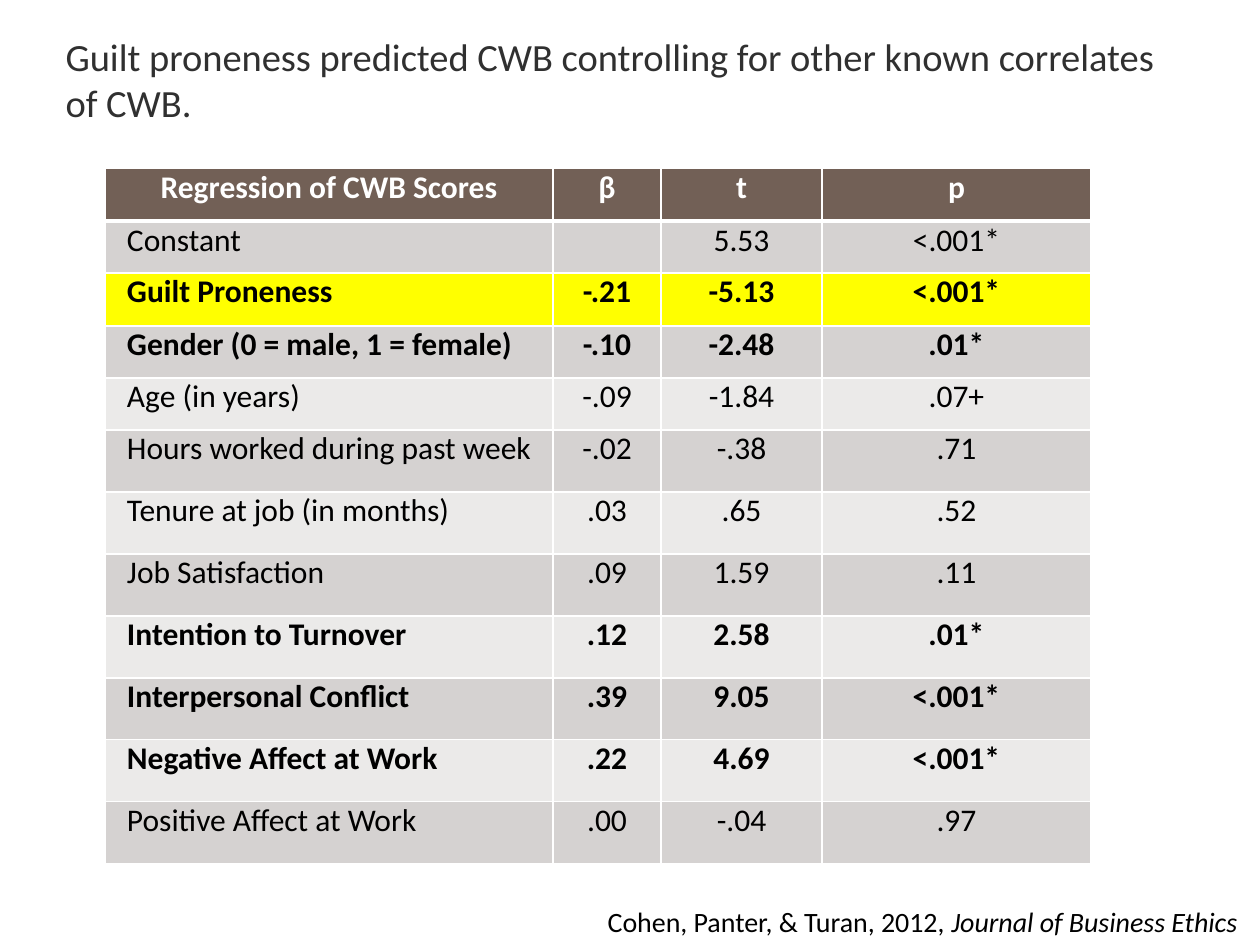
import pptx
import pptx.util
import pptx.dml.color
import pptx.enum.text
import pptx.oxml
import pptx.oxml.ns

TITLE = "Guilt proneness predicted CWB controlling for other known correlates of CWB."
SOURCE = [("Cohen, Panter, & Turan, 2012", False), (", Journal of Business Ethics", True)]
HEADER = ("Regression of CWB Scores", "β", "t", "p")
ROWS = [
    ("Constant", "", "5.53", "<.001*"),
    ("Guilt Proneness", "-.21", "-5.13", "<.001*"),
    ("Gender (0 = male, 1 = female)", "-.10", "-2.48", ".01*"),
    ("Age (in years)", "-.09", "-1.84", ".07+"),
    ("Hours worked during past week", "-.02", "-.38", ".71"),
    ("Tenure at job (in months)", ".03", ".65", ".52"),
    ("Job Satisfaction", ".09", "1.59", ".11"),
    ("Intention to Turnover", ".12", "2.58", ".01*"),
    ("Interpersonal Conflict", ".39", "9.05", "<.001*"),
    ("Negative Affect at Work", ".22", "4.69", "<.001*"),
    ("Positive Affect at Work", ".00", "-.04", ".97"),
]
BOLD = {"Guilt Proneness", "Gender (0 = male, 1 = female)", "Intention to Turnover",
        "Interpersonal Conflict", "Negative Affect at Work"}
HIGHLIGHT = "Guilt Proneness"
COL_WIDTHS = (448, 108, 161, 269)
ROW_HEIGHTS = [53, 52, 53, 52, 52] + [62] * 7
BANDS = ("EBEAE9", "D5D2D1")
ALIGN = pptx.enum.text.PP_ALIGN


def px(n):
    return pptx.util.Emu(round(n * 914400 / 126))


def rgb(color):
    return pptx.dml.color.RGBColor.from_string(color)


def add_run(p, text, size, color, bold=False, italic=False):
    r = p.add_run()
    r.text = text
    r.font.name = "Calibri"
    r.font.size = pptx.util.Pt(size)
    r.font.color.rgb = rgb(color)
    r.font.bold = bold
    r.font.italic = italic


def add_borders(cell, bottom):
    tcPr = cell._tc.get_or_add_tcPr()
    for i, (side, width) in enumerate(zip("LRTB", (1, 1, 1, bottom))):
        tcPr.insert(i, pptx.oxml.parse_xml(
            f'<a:ln{side} {pptx.oxml.ns.nsdecls("a")} w="{pptx.util.Pt(width)}">'
            f'<a:solidFill><a:srgbClr val="FFFFFF"/></a:solidFill></a:ln{side}>'))


def fill_cell(cell, text, fill, color, bold, label, bottom):
    cell.margin_left = px(22 if label else 9)
    cell.margin_right = px(9)
    cell.margin_top = cell.margin_bottom = 0
    cell.fill.solid()
    cell.fill.fore_color.rgb = rgb(fill)
    add_borders(cell, bottom)
    p = cell.text_frame.paragraphs[0]
    p.alignment = ALIGN.LEFT if label else ALIGN.CENTER
    if text:
        add_run(p, text, 18, color, bold)


prs = pptx.Presentation()
prs.slide_width, prs.slide_height = px(1260), px(945)
s = prs.slides.add_slide(prs.slide_layouts[5])

title = s.shapes.title
title.left, title.top, title.width, title.height = px(53), px(32), px(1124), px(94)
tf = title.text_frame
tf.vertical_anchor = pptx.enum.text.MSO_ANCHOR.MIDDLE
p = tf.paragraphs[0]
p.alignment = ALIGN.LEFT
add_run(p, TITLE, 22, "303030")

table = s.shapes.add_table(len(ROWS) + 1, len(HEADER), px(105), px(168),
                           px(sum(COL_WIDTHS)), px(sum(ROW_HEIGHTS))).table
for column, width in zip(table.columns, COL_WIDTHS):
    column.width = px(width)
for row, height in zip(table.rows, ROW_HEIGHTS):
    row.height = px(height)

for j, text in enumerate(HEADER):
    fill_cell(table.cell(0, j), text, "726056", "FFFFFF", True, False, 3)
for i, values in enumerate(ROWS, 1):
    name = values[0]
    fill = "FFFF00" if name == HIGHLIGHT else BANDS[i % 2]
    for j, text in enumerate(values):
        fill_cell(table.cell(i, j), text, fill, "000000", name in BOLD, j == 0, 1)

tf = s.shapes.add_textbox(px(441), px(898), px(809), px(47)).text_frame
tf.word_wrap = True
tf.auto_size = pptx.enum.text.MSO_AUTO_SIZE.SHAPE_TO_FIT_TEXT
p = tf.paragraphs[0]
p.alignment = ALIGN.RIGHT
for text, italic in SOURCE:
    add_run(p, text, 16, "000000", italic=italic)

prs.save("out.pptx")
